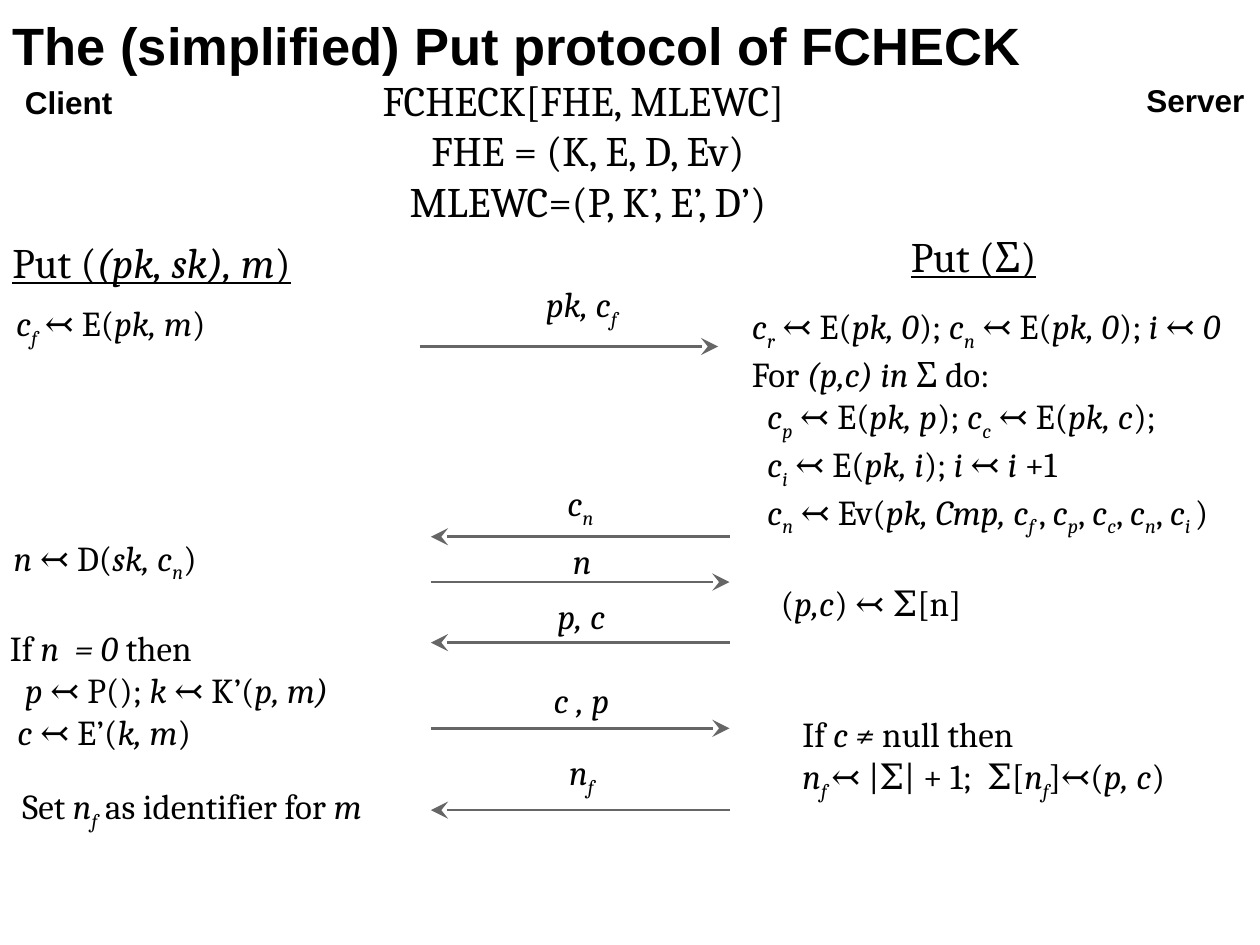
from dataclasses import dataclass

from lxml import etree
from pptx import Presentation
from pptx import util as u
from pptx.dml.color import RGBColor
from pptx.enum import shapes, text
from pptx.oxml.ns import qn


@dataclass(frozen=True)
class Theme:
    ink: RGBColor = RGBColor(0, 0, 0)
    arrow: RGBColor = RGBColor(0x66, 0x66, 0x66)
    heading_font: str = "Arial"
    formula_font: str = "Cambria"
    title: int = 30
    signature: int = 24
    step: int = 20
    party: int = 18
    arrow_width: float = 1.5
    inset: float = 0.1
    indent: float = 0.06


COLUMNS, ROWS = 10, 7.5
TOP, MIDDLE = text.MSO_ANCHOR.TOP, text.MSO_ANCHOR.MIDDLE
LEFT, CENTER = text.PP_ALIGN.LEFT, text.PP_ALIGN.CENTER


class ProtocolSlide:
    """Places elements by (left, top, width, height) in grid columns and rows."""

    def __init__(self, presentation, theme):
        self.theme = theme
        self.column = presentation.slide_width / COLUMNS
        self.row = presentation.slide_height / ROWS
        self.slide = presentation.slides.add_slide(presentation.slide_layouts[5])

    def position(self, column, row):
        return int(column * self.column), int(row * self.row)

    def title(self, wording, box):
        shape = self.slide.shapes.title
        shape.left, shape.top = self.position(*box[:2])
        shape.width, shape.height = self.position(*box[2:])
        self.fill_frame(shape.text_frame, [wording], self.theme.title,
                        self.theme.heading_font, TOP, bold=True)

    def heading(self, wording, box):
        self.text([wording], box, self.theme.party, self.theme.heading_font,
                  TOP, bold=True)

    def signature(self, wording, box):
        self.text([wording], box, self.theme.signature, anchor=TOP, underline=True)

    def text(self, lines, box, size=None, font=None, anchor=MIDDLE, **look):
        shape = self.slide.shapes.add_textbox(*self.position(*box[:2]),
                                              *self.position(*box[2:]))
        self.fill_frame(shape.text_frame, lines, size or self.theme.step,
                        font or self.theme.formula_font, anchor, **look)

    def fill_frame(self, frame, lines, size, font, anchor, align=LEFT,
                   bold=False, underline=False, indents=None):
        frame.word_wrap = True
        frame.auto_size = text.MSO_AUTO_SIZE.NONE
        frame.vertical_anchor = anchor
        frame.margin_left = frame.margin_right = u.Inches(self.theme.inset)
        frame.margin_top = frame.margin_bottom = u.Inches(self.theme.inset)
        for index, line in enumerate(lines):
            paragraph = frame.paragraphs[0] if index == 0 else frame.add_paragraph()
            paragraph.alignment = align
            paragraph.font.size, paragraph.font.name = u.Pt(size), font
            paragraph.font.bold, paragraph.font.underline = bold, underline
            paragraph.font.color.rgb = self.theme.ink
            if indents and indents[index]:
                margin = u.Inches(indents[index] * self.theme.indent)
                properties = paragraph._p.get_or_add_pPr()
                properties.set("marL", str(margin))
                properties.set("indent", "0")
            self.formula(paragraph, line)

    def formula(self, paragraph, line):
        """Add runs: *italic* and _italic subscript_."""
        for index, part in enumerate(line.split("*")):
            for depth, piece in enumerate(part.split("_")):
                if not piece:
                    continue
                run = paragraph.add_run()
                run.text = piece
                if index % 2 or depth % 2:
                    run.font.italic = True
                if depth % 2:
                    run._r.get_or_add_rPr().set("baseline", "-25000")

    def arrow(self, start, end, row, to_server):
        line = self.slide.shapes.add_connector(
            shapes.MSO_CONNECTOR.STRAIGHT,
            *self.position(start, row), *self.position(end, row))
        line.line.color.rgb = self.theme.arrow
        line.line.width = u.Pt(self.theme.arrow_width)
        etree.SubElement(line.line._get_or_add_ln(),
                         qn("a:tailEnd" if to_server else "a:headEnd"),
                         type="stealth", w="lg", len="lg")
        etree.SubElement(line._element.spPr, qn("a:effectLst"))


def main():
    presentation = Presentation()
    presentation.slide_width = u.Inches(10)
    presentation.slide_height = u.Inches(7.5)
    theme = Theme()
    page = ProtocolSlide(presentation, theme)

    # Title, parties and scheme definitions
    page.title("The (simplified) Put protocol of FCHECK", (0, 0, 9, 1.25))
    page.heading("Client", (0.1, 0.56, 1.1, 0.3))
    page.heading("Server", (9, 0.54, 1.55, 0.3))
    page.text(["FCHECK[FHE, MLEWC] ", "FHE = (K, E, D, Ev)", "MLEWC=(P, K’, E’, D’)"],
              (0.12, 0.16, 9.09, 2.06), theme.signature, align=CENTER)

    # Client steps
    page.signature("Put (*(pk, sk), m*)", (0, 1.78, 4.37, 0.6))
    page.text(["*c*_f_ ↢ E(*pk, m*)"], (0.03, 2.22, 2.49, 0.73))
    page.text(["*n *↢ D(*sk, c*_n_)"], (0.01, 4.08, 3.91, 0.73))
    page.text(["If *n  = 0 *then",
               "*p *↢ P(); *k *↢ K’(*p, m)*",
               "*c *↢ E’(*k, m*)"],
              (-0.02, 4.44, 3.91, 2.06), indents=(0, 2, 1))
    page.text(["Set *n*_f_ as identifier for *m*"], (0.08, 6.15, 3.39, 0.53))

    # Server steps
    page.signature("Put (Σ)", (7.13, 1.73, 2.81, 0.6))
    page.text(["*c*_r_ ↢ E(*pk, 0*); *c*_n_ ↢ E(*pk, 0*); *i* ↢ *0*",
               "For* (p,c) in *Σ do:",
               "*c*_p_ ↢ E(*pk, p*); *c*_c_ ↢ E(*pk, c*);",
               "*c*_i_ ↢ E(*pk, i*); *i *↢ *i *+1",
               "*c*_n_ ↢ Ev(*pk, Cmp, c*_f _, *c*_p_, *c*_c_, *c*_n_, *c*_i _)"],
              (5.87, 1.88, 4.13, 2.93), indents=(0, 0, 2, 2, 2))
    page.text(["(*p,c*) ↢ Σ[n]"], (6.1, 4.52, 2.03, 0.53))
    page.text(["If *c ≠ *null then",
               "*n*_f _↢ |Σ| + 1;  Σ[*n*_f_]↢(*p, c*)"],
              (6.27, 5.48, 3.6, 1.07))

    # Messages: label, label box, arrow start and row, direction
    messages = [
        ("*pk, c*_f_", (3.8, 1.81, 1.63, 1.25), 3.33, 2.75, True),
        ("*c*_n _", (4.07, 3.85, 1.11, 0.32), 3.42, 4.26, False),
        ("*n*", (4.27, 4.12, 0.7, 0.65), 3.42, 4.62, True),
        ("*p, c*", (3.8, 4.26, 1.63, 1.25), 3.42, 5.1, False),
        ("*c , p*", (3.8, 4.93, 1.63, 1.25), 3.42, 5.78, True),
        ("*n*_f_", (3.8, 5.52, 1.63, 1.25), 3.42, 6.43, False),
    ]
    arrow_length = 2.37
    for label, box, start, row, to_server in messages:
        page.text([label], box, align=CENTER)
        page.arrow(start, start + arrow_length, row, to_server)

    presentation.save("out.pptx")


if __name__ == "__main__":
    main()
